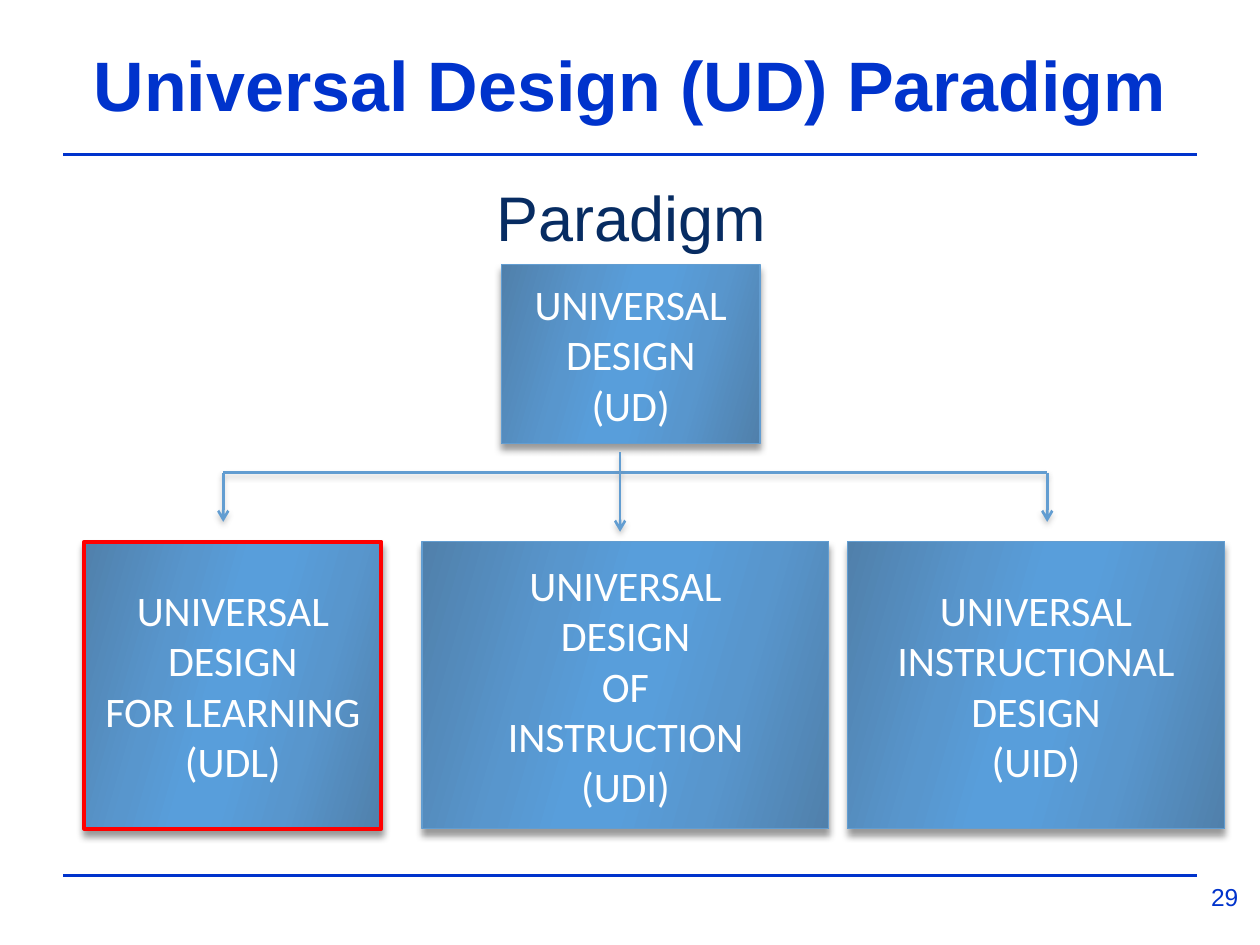
from lxml import etree
from pptx import Presentation
from pptx.dml.color import RGBColor as Rgb
from pptx.enum.shapes import MSO_CONNECTOR as Link, MSO_SHAPE as Shape
from pptx.enum.text import MSO_ANCHOR as Anchor, PP_ALIGN as Align
from pptx.oxml import parse_xml
from pptx.oxml.ns import nsdecls, qn
from pptx.util import Cm, Pt

HUES = {"royal": "0033CC", "navy": "072C62", "sky": "629DD1", "red": "FF0000",
        "white": "FFFFFF", "black": "000000", "gray": "808080"}
STOPS = [(0, "5080AB"), (30, "5896CD"), (45, "589EDB"),
         (55, "589EDB"), (73, "5896CD"), (100, "5080AB")]
ANGLE = 16

# Lengths in cm
LEFT, WIDE = 1.27, 22.86
RULES = [3.12, 17.65]
TEXTS = [
    ("Universal Design (UD) Paradigm", (LEFT, 0.74, WIDE, 1.91), "royal",
     {"size": Pt(40), "bold": True}, {"vertical_anchor": Anchor.BOTTOM}),
    ("Paradigm", (1.3, 3.33, WIDE, 1.9), "navy",
     {"size": Pt(36)}, {"margin_top": Cm(0.27)}),
    ("29", (23.98, 17.65, 1.42, 1.07), "royal", {"size": Pt(14)}, {}),
]
ROOT = (["UNIVERSAL", "DESIGN", "(UD)"], 10.11, 5.21, "sky", 0.75)
KIDS = [
    (["UNIVERSAL", "DESIGN", "FOR LEARNING", "(UDL)"], 1.7, 5.99, "red", 2.25),
    (["UNIVERSAL", "DESIGN", "OF", "INSTRUCTION", "(UDI)"], 8.51, 8.2, "sky", 0.75),
    (["UNIVERSAL", "INSTRUCTIONAL", "DESIGN", "(UID)"], 17.09, 7.59, "sky", 0.75),
]
ROWS = [(5.33, 3.61, [ROOT]), (10.92, 5.79, KIDS)]
BAR, ENDS, DROP = 9.53, (4.5, 21.11), 10.52
STEM = (12.5, 9.12, 12.5, 10.72)


def paint(hue):
    return Rgb.from_string(HUES[hue])


def apply(item, vals):
    for key, val in vals.items():
        setattr(item, key, val)


def write(frame, lines, hue, font, body):
    apply(frame, {"word_wrap": True, **body})
    for i, line in enumerate(lines):
        para = frame.paragraphs[0] if i == 0 else frame.add_paragraph()
        para.alignment = Align.CENTER
        run = para.add_run()
        run.text = line
        apply(run.font, font)
        run.font.color.rgb = paint(hue)


def shade(item, hue=None, blur=0, dist=0):
    """Give a shape or line a soft shadow below it, or none without a hue."""
    props = item._element.spPr
    effect = etree.SubElement(props, qn("a:effectLst"))
    if hue:
        effect.append(parse_xml(
            f'<a:outerShdw {nsdecls("a")} blurRad="{Pt(blur)}" dist="{Pt(dist)}" '
            f'dir="5400000" rotWithShape="0"><a:srgbClr val="{HUES[hue]}">'
            '<a:alpha val="40000"/></a:srgbClr></a:outerShdw>'))


def blend(shape):
    """Fill a shape with the slanted blue gradient."""
    stops = "".join(f'<a:gs pos="{pos * 1000}"><a:srgbClr val="{tone}"/></a:gs>'
                    for pos, tone in STOPS)
    shape._element.spPr.find(qn("a:prstGeom")).addnext(parse_xml(
        f'<a:gradFill {nsdecls("a")} rotWithShape="1"><a:gsLst>{stops}</a:gsLst>'
        f'<a:lin ang="{ANGLE * 60000}" scaled="0"/></a:gradFill>'))


def draw(slide, ends, hue, arrow=False):
    line = slide.shapes.add_connector(Link.STRAIGHT, *map(Cm, ends))
    line.line.color.rgb = paint(hue)
    line.line.width = Pt(1.5)
    if arrow:
        etree.SubElement(line.line._get_or_add_ln(), qn("a:tailEnd"), type="arrow")
    return line


def main():
    deck = Presentation()
    apply(deck, {"slide_width": Cm(25.4), "slide_height": Cm(19.05)})
    slide = deck.slides.add_slide(deck.slide_layouts[6])

    for y in RULES:
        shade(draw(slide, (LEFT, y, LEFT + WIDE, y), "royal"))

    for top, high, boxes in ROWS:
        for lines, left, wide, edge, thick in boxes:
            box = slide.shapes.add_shape(
                Shape.RECTANGLE, *map(Cm, (left, top, wide, high)))
            blend(box)
            box.line.color.rgb = paint(edge)
            box.line.width = Pt(thick)
            shade(box, "black", 4, 3.4)
            write(box.text_frame, lines, "white",
                  {"name": "Calibri", "size": Pt(24)},
                  {"vertical_anchor": Anchor.MIDDLE})

    drops = [(x, BAR, x, DROP) for x in ENDS]
    shade(draw(slide, (ENDS[0], BAR, ENDS[1], BAR), "sky"), "gray", 3, 2)
    for ends in [STEM, *drops]:
        shade(draw(slide, ends, "sky", True), "gray", 3, 2)

    for text, place, hue, font, body in TEXTS:
        box = slide.shapes.add_textbox(*map(Cm, place))
        write(box.text_frame, [text], hue, {"name": "Arial", **font}, body)

    deck.save("out.pptx")


if __name__ == "__main__":
    main()
